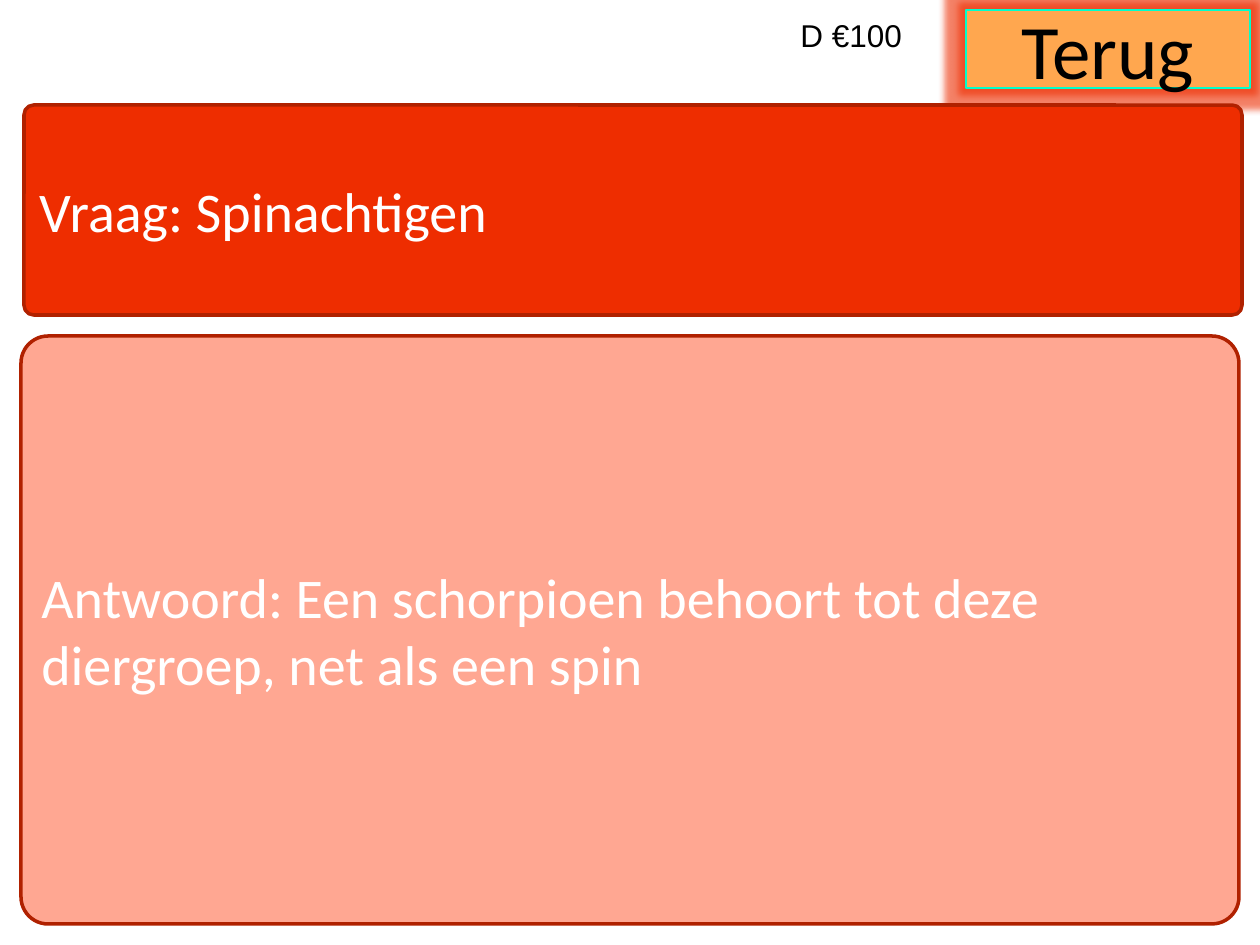
from dataclasses import dataclass

from lxml.etree import SubElement
from pptx import Presentation
from pptx.dml.color import RGBColor
from pptx.enum.shapes import MSO_SHAPE as Preset
from pptx.enum.text import MSO_ANCHOR as Anchor, PP_ALIGN as Align
from pptx.oxml.ns import qn
from pptx.util import Pt

EMU_PER_PX = 914400 / 126


@dataclass
class Panel:
    text: str
    left: int
    top: int
    width: int
    height: int
    fill: str
    line: str
    line_points: float
    size: int
    ink: str
    preset: Preset = Preset.ROUNDED_RECTANGLE
    align: Align = Align.LEFT


def px(length: int) -> int:
    return round(length * EMU_PER_PX)


def colour(value: str) -> RGBColor:
    return RGBColor.from_string(value)


def write(box, text: str, font: str, size: int, ink: str, align: Align) -> None:
    para = box.text_frame.paragraphs[0]
    para.alignment = align
    span = para.add_run()
    span.text = text
    for name, value in {"name": font, "size": Pt(size)}.items():
        setattr(span.font, name, value)
    span.font.color.rgb = colour(ink)


def draw_panel(page, panel: Panel):
    edges = (panel.left, panel.top, panel.width, panel.height)
    box = page.shapes.add_shape(panel.preset, *map(px, edges))
    box.shadow.inherit = False
    if panel.preset == Preset.ROUNDED_RECTANGLE:
        box.adjustments[0] = 0.046
    box.fill.solid()
    box.fill.fore_color.rgb = colour(panel.fill)
    box.line.color.rgb = colour(panel.line)
    box.line.width = Pt(panel.line_points)
    frame_format = {"word_wrap": True, "vertical_anchor": Anchor.MIDDLE}
    for name, value in frame_format.items():
        setattr(box.text_frame, name, value)
    write(box, panel.text, "Calibri", panel.size, panel.ink, panel.align)
    return box


def add_glow(box, glow_colour: str, points: int, opacity: int) -> None:
    effects = box._element.spPr.find(qn("a:effectLst"))
    glow = SubElement(effects, qn("a:glow"), rad=str(Pt(points)))
    tint = SubElement(glow, qn("a:srgbClr"), val=glow_colour)
    SubElement(tint, qn("a:alpha"), val=str(opacity * 1000))


def draw_label(page, text: str, left: int, top: int, width: int, height: int) -> None:
    box = page.shapes.add_textbox(*map(px, (left, top, width, height)))
    box.text_frame.word_wrap = True
    write(box, text, "Arial", 18, "000000", Align.LEFT)


def main() -> None:
    deck = Presentation()
    deck.slide_width, deck.slide_height = px(1260), px(945)
    page = deck.slides.add_slide(deck.slide_layouts[6])

    back_button = Panel("Terug", 966, 10, 284, 78, "FFA74F", "00FFCC", 0.75,
                        44, "000000", Preset.RECTANGLE, Align.CENTER)
    answer = Panel("Antwoord: Een schorpioen behoort tot deze diergroep, net als een spin",
                   21, 336, 1218, 588, "FFA792", "B02100", 2, 32, "FFFFFF")
    question = Panel("Vraag: Spinachtigen",
                     24, 105, 1218, 210, "EE2D00", "B02100", 2, 32, "FFFFFF")

    add_glow(draw_panel(page, back_button), "EE2D00", 8, 60)
    draw_label(page, "D €100", 788, 10, 179, 81)
    for panel in (answer, question):
        draw_panel(page, panel)
    deck.save("out.pptx")


if __name__ == "__main__":
    main()
